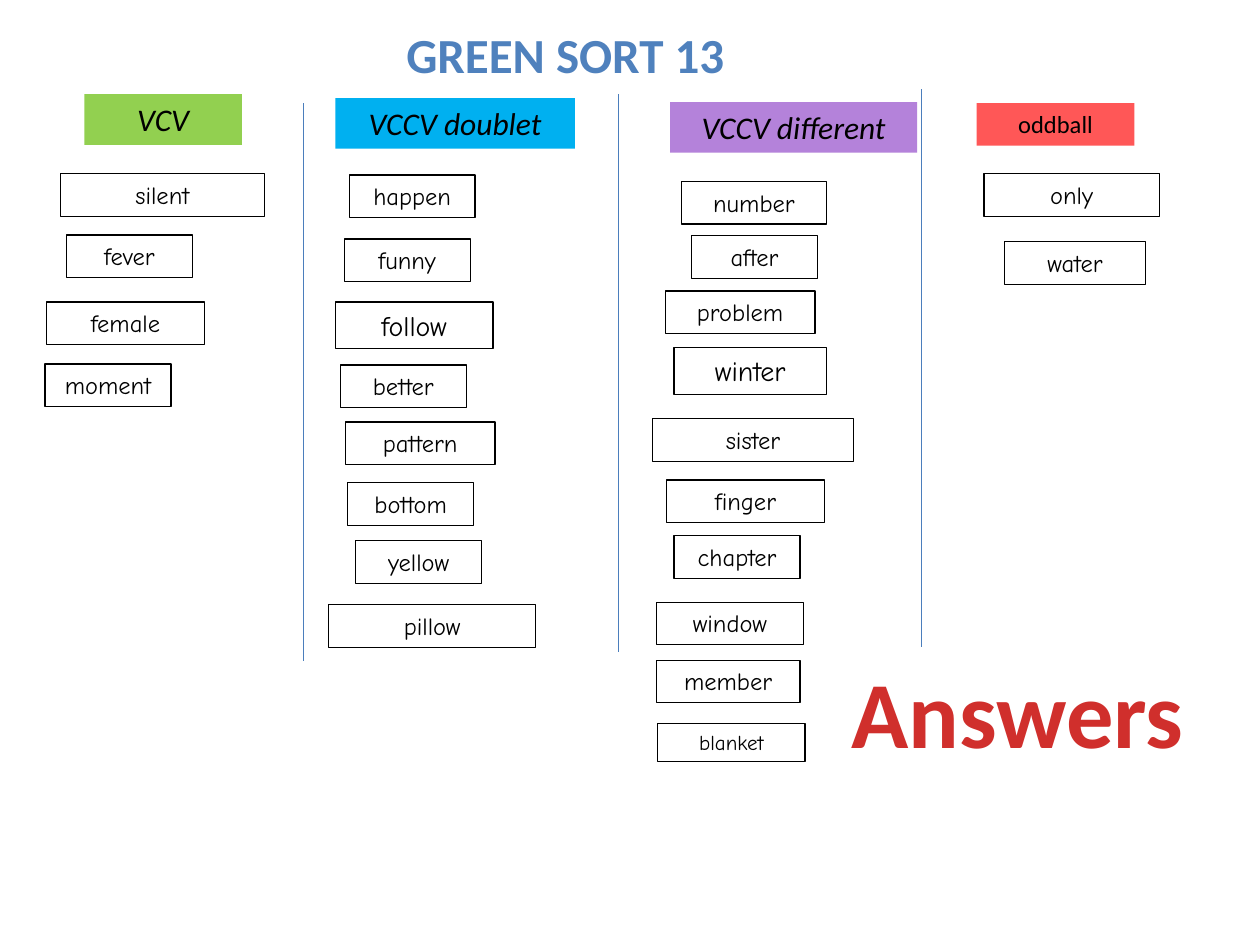
from dataclasses import dataclass

from lxml import etree
from pptx import Presentation
from pptx.dml.color import RGBColor
from pptx.enum.shapes import MSO_CONNECTOR, MSO_SHAPE
from pptx.enum.text import MSO_ANCHOR, MSO_AUTO_SIZE, PP_ALIGN
from pptx.oxml.ns import qn
from pptx.util import Cm, Pt

RECTANGLE = MSO_SHAPE.RECTANGLE
STRAIGHT = MSO_CONNECTOR.STRAIGHT
CENTER = PP_ALIGN.CENTER
TOP = MSO_ANCHOR.TOP
GROW = MSO_AUTO_SIZE.SHAPE_TO_FIT_TEXT
TITLE_ONLY = 5


@dataclass(frozen=True)
class Theme:
    heading_font: str = "Calibri"
    word_font: str = "Comic Neue"
    ink: str = "000000"
    title: str = "4F81BD"
    answers: str = "D02F2C"
    divider: str = "4B7EBC"
    vcv: str = "92D050"
    doublet: str = "00B0F0"
    different: str = "B482DA"
    oddball: str = "FF5757"
    title_size: int = 28
    answers_size: int = 54
    heading_size: int = 18
    large_word: int = 16
    word: int = 14
    small_word: int = 12
    hairline: float = 0.75


THEME = Theme()
CARD_HEIGHTS = {12: 0.77, 14: 0.86, 16: 0.94, 18: 1.02}
DIVIDER_HEIGHT = 11.24

COLUMNS = [
    ("VCV", THEME.vcv, THEME.heading_size, True, (1.7, 1.9, 3.18), [
        ("silent", -0.48, 1.6, 4.11),
        ("fever", -0.36, 2.84, 2.54),
        ("female", -0.76, 4.19, 3.18),
        ("moment", -0.79, 5.44, 2.54),
    ]),
    ("VCCV doublet", THEME.doublet, THEME.heading_size, True, (6.76, 1.98, 4.83), [
        ("happen", 0.28, 1.55, 2.54),
        ("funny", 0.18, 2.84, 2.54),
        ("follow", 0, 4.11, 3.18, THEME.large_word),
        ("better", 0.1, 5.38, 2.54),
        ("pattern", 0.2, 6.53, 3.02),
        ("bottom", 0.25, 7.75, 2.54),
        ("yellow", 0.41, 8.92, 2.54),
        ("pillow", -0.13, 10.21, 4.17),
    ]),
    ("VCCV different", THEME.different, THEME.heading_size, True, (13.51, 2.06, 4.98), [
        ("number", 0.23, 1.6, 2.92),
        ("after", 0.43, 2.69, 2.54),
        ("problem", -0.1, 3.81, 3.02),
        ("winter", 0.08, 4.95, 3.07, THEME.large_word),
        ("sister", -0.36, 6.38, 4.06),
        ("finger", -0.08, 7.62, 3.2),
        ("chapter", 0.08, 8.74, 2.54),
        ("window", -0.28, 10.08, 2.97),
        ("member", -0.28, 11.25, 2.9),
        ("blanket", -0.25, 12.52, 2.97, THEME.small_word),
    ]),
    ("oddball", THEME.oddball, THEME.word, False, (19.69, 2.08, 3.18), [
        ("only", 0.15, 1.42, 3.53),
        ("water", 0.56, 2.79, 2.84),
    ]),
]

DIVIDERS = [(6.12, 2.08), (12.47, 1.9), (18.57, 1.8)]


def write(shape, text, font_name, size, color, bold=False, italic=False, wrap=True):
    frame = shape.text_frame
    frame.text = text
    frame.word_wrap = wrap
    frame.auto_size = GROW
    frame.vertical_anchor = TOP
    paragraph = frame.paragraphs[0]
    paragraph.alignment = CENTER
    font = paragraph.font
    font.name = font_name
    font.size = Pt(size)
    font.bold = bold
    font.italic = italic
    font.color.rgb = RGBColor.from_string(color)


def add_card(slide, left, top, width, text, font_name, size, fill=None, italic=False):
    card = slide.shapes.add_shape(
        RECTANGLE, Cm(left), Cm(top), Cm(width), Cm(CARD_HEIGHTS[size]))
    card.shadow.inherit = False
    if fill:
        card.fill.solid()
        card.fill.fore_color.rgb = RGBColor.from_string(fill)
        card.line.fill.background()
    else:
        card.fill.background()
        card.line.color.rgb = RGBColor.from_string(THEME.ink)
        card.line.width = Pt(THEME.hairline)
    write(card, text, font_name, size, THEME.ink, italic=italic)


def add_column(slide, heading, fill, size, italic, box, words):
    left, top, width = box
    add_card(slide, left, top, width, heading, THEME.heading_font, size, fill, italic)
    for word, shift, drop, word_width, *word_size in words:
        add_card(slide, left + shift, top + drop, word_width, word,
                 THEME.word_font, word_size[0] if word_size else THEME.word)


def add_divider(slide, x, top):
    divider = slide.shapes.add_connector(
        STRAIGHT, Cm(x), Cm(top), Cm(x), Cm(top + DIVIDER_HEIGHT))
    divider.line.color.rgb = RGBColor.from_string(THEME.divider)
    divider.line.width = Pt(THEME.hairline)
    etree.SubElement(divider.line._get_or_add_ln().getparent(), qn("a:effectLst"))


def place_title(slide, left, top, width, height):
    title = slide.shapes.title
    title.left, title.top = Cm(left), Cm(top)
    title.width, title.height = Cm(width), Cm(height)
    write(title, "GREEN SORT 13", THEME.heading_font, THEME.title_size,
          THEME.title, bold=True)


def add_answers(slide, left, top, width, height):
    answers = slide.shapes.add_textbox(Cm(left), Cm(top), Cm(width), Cm(height))
    write(answers, "Answers", THEME.heading_font, THEME.answers_size,
          THEME.answers, bold=True, wrap=False)


def main():
    deck = Presentation()
    deck.slide_width, deck.slide_height = Cm(25.4), Cm(19.05)
    slide = deck.slides.add_slide(deck.slide_layouts[TITLE_ONLY])
    place_title(slide, 5.54, 0.36, 11.71, 1.45)
    for divider in DIVIDERS:
        add_divider(slide, *divider)
    for column in COLUMNS:
        add_column(slide, *column)
    add_answers(slide, 16.87, 13.06, 7.29, 2.57)
    deck.save("out.pptx")


if __name__ == "__main__":
    main()
